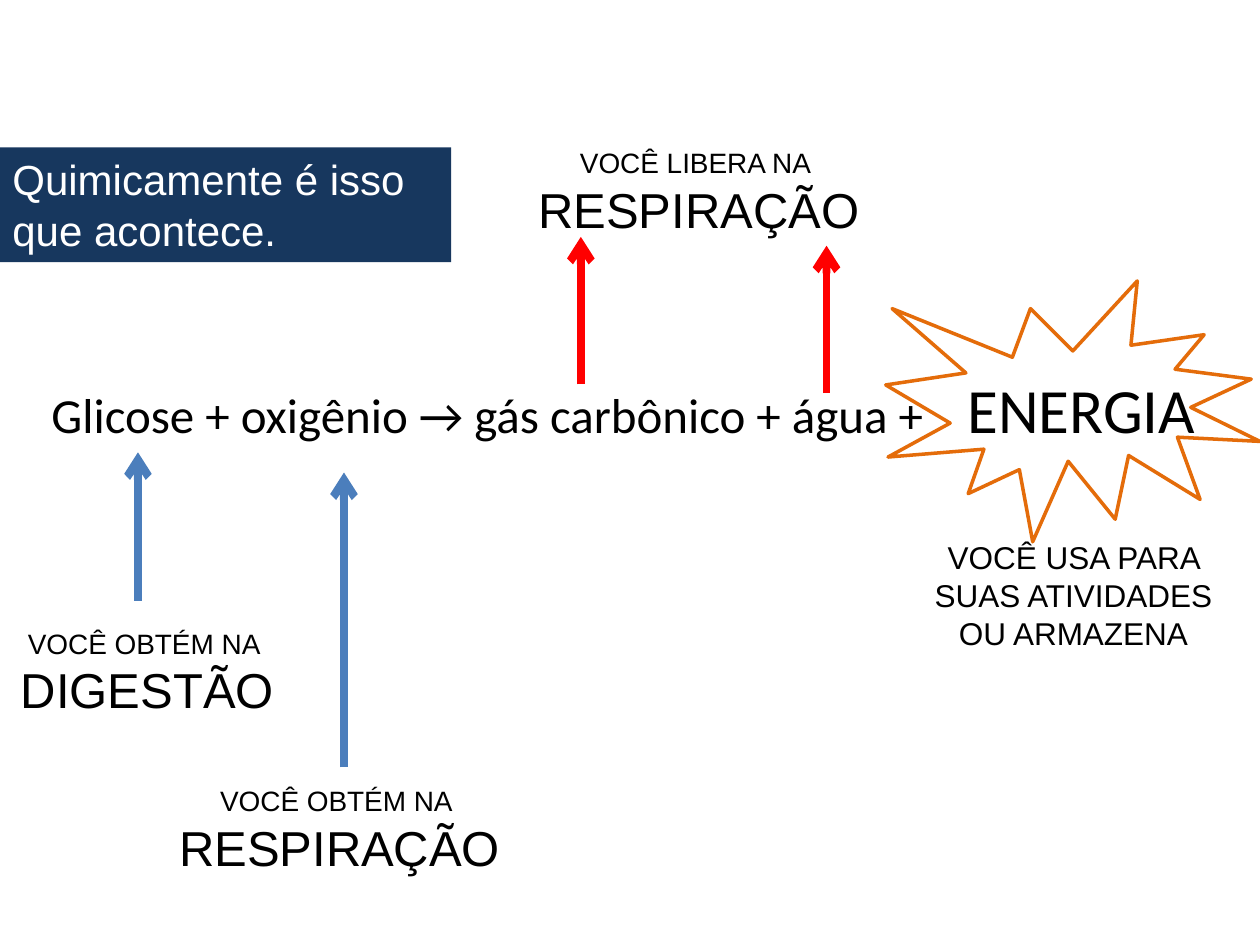
"""Build a slide that explains the cellular respiration equation."""
from lxml import etree
from pptx import Presentation
from pptx import util as u
from pptx.dml.color import RGBColor
from pptx.enum import shapes, text
from pptx.oxml.ns import qn

COLORS = {"ink": "000000", "paper": "FFFFFF", "navy": "17375E",
          "intake": "4B7EBC", "release": "FF0000", "burst": "E46C0A"}
CELL = u.Inches(0.1)
COLUMNS, ROWS = 100, 75


def cells(*counts):
    """Turn counts of grid columns or rows into lengths."""
    return [u.Emu(round(count * CELL)) for count in counts]


def color(name):
    """Look up a named colour."""
    return RGBColor.from_string(COLORS[name])


def add_span(para, words, size, font="Arial", ink="ink"):
    """Append one formatted run to a paragraph."""
    span = para.add_run()
    span.text = words
    span.font.size = u.Pt(size)
    span.font.name = font
    span.font.color.rgb = color(ink)


def add_box(page, area):
    """Add a wrapping text box and return its frame."""
    frame = page.shapes.add_textbox(*cells(*area)).text_frame
    frame.word_wrap = True
    frame.auto_size = text.MSO_AUTO_SIZE.SHAPE_TO_FIT_TEXT
    return frame


def add_equation(page, area, terms, product, stop):
    """Add the equation, with its product placed at a tab stop."""
    para = add_box(page, area).paragraphs[0]
    add_span(para, terms + "\t", 28, "Calibri")
    add_span(para, product, 36, "Calibri")
    props = para._p.get_or_add_pPr()
    before = etree.SubElement(props, qn("a:spcBef"))
    etree.SubElement(before, qn("a:spcPct"), val="20000")
    tabs = etree.SubElement(props, qn("a:tabLst"))
    etree.SubElement(tabs, qn("a:tab"), pos=str(cells(stop)[0]), algn="l")


def add_caption(page, area, lines):
    """Add centred lines, each a pair of words and size."""
    frame = add_box(page, area)
    for index, (words, size) in enumerate(lines):
        para = frame.add_paragraph() if index else frame.paragraphs[0]
        para.alignment = text.PP_ALIGN.CENTER
        add_span(para, words, size)


def add_arrow(page, column, bottom, top, ink):
    """Add a vertical arrow that points up."""
    arrow = page.shapes.add_connector(
        shapes.MSO_CONNECTOR.STRAIGHT, *cells(column, bottom, column, top))
    arrow.line.color.rgb = color(ink)
    arrow.line.width = u.Pt(4.5)
    etree.SubElement(arrow.line._get_or_add_ln(), qn("a:tailEnd"), type="arrow")
    etree.SubElement(arrow._element.spPr, qn("a:effectLst"))


def add_burst(page, area):
    """Add the outlined burst around the energy term."""
    burst = page.shapes.add_shape(shapes.MSO_SHAPE.EXPLOSION1, *cells(*area))
    burst.shadow.inherit = False
    burst.fill.background()
    burst.line.color.rgb = color("burst")
    burst.line.width = u.Pt(2)


def add_banner(page, area, words):
    """Add the filled banner with the opening statement."""
    banner = page.shapes.add_shape(shapes.MSO_SHAPE.RECTANGLE, *cells(*area))
    banner.shadow.inherit = False
    banner.fill.solid()
    banner.fill.fore_color.rgb = color("navy")
    banner.line.fill.background()
    frame = banner.text_frame
    frame.word_wrap = True
    frame.vertical_anchor = text.MSO_ANCHOR.TOP
    para = frame.paragraphs[0]
    para.alignment = text.PP_ALIGN.LEFT
    add_span(para, words, 24, ink="paper")


def main():
    """Compose the slide and save it."""
    deck = Presentation()
    deck.slide_width, deck.slide_height = cells(COLUMNS, ROWS)
    page = deck.slides.add_slide(deck.slide_layouts[6])

    add_equation(page, (3.1, 28.9, 94.5, 7.1),
                 "Glicose + oxigênio → gás carbônico + água +", "ENERGIA", 72.7)

    for column, bottom, top, ink in [(10.95, 47.7, 35.9, "intake"),
                                     (27.3, 60.9, 37.5, "intake"),
                                     (46.1, 30.5, 18.8, "release"),
                                     (65.6, 31.2, 19.5, "release")]:
        add_arrow(page, column, bottom, top, ink)

    for left, top, width, action, process in [
            (0, 49.2, 23.4, "VOCÊ OBTÉM NA ", "DIGESTÃO"),
            (11.7, 61.7, 30.5, "VOCÊ OBTÉM NA ", "RESPIRAÇÃO"),
            (41.4, 11.1, 28.1, "VOCÊ LIBERA NA ", "RESPIRAÇÃO")]:
        add_caption(page, (left, top, width, 8.4), [(action, 16), (process, 28)])

    add_burst(page, (70.3, 22.3, 29.7, 20.7))
    add_caption(page, (72.7, 42.2, 25, 10.1),
                [("VOCÊ USA PARA SUAS ATIVIDADES OU ARMAZENA", 18)])
    add_banner(page, (0, 11.7, 35.8, 9.1), "Quimicamente é isso que acontece.")
    deck.save("out.pptx")


if __name__ == "__main__":
    main()
